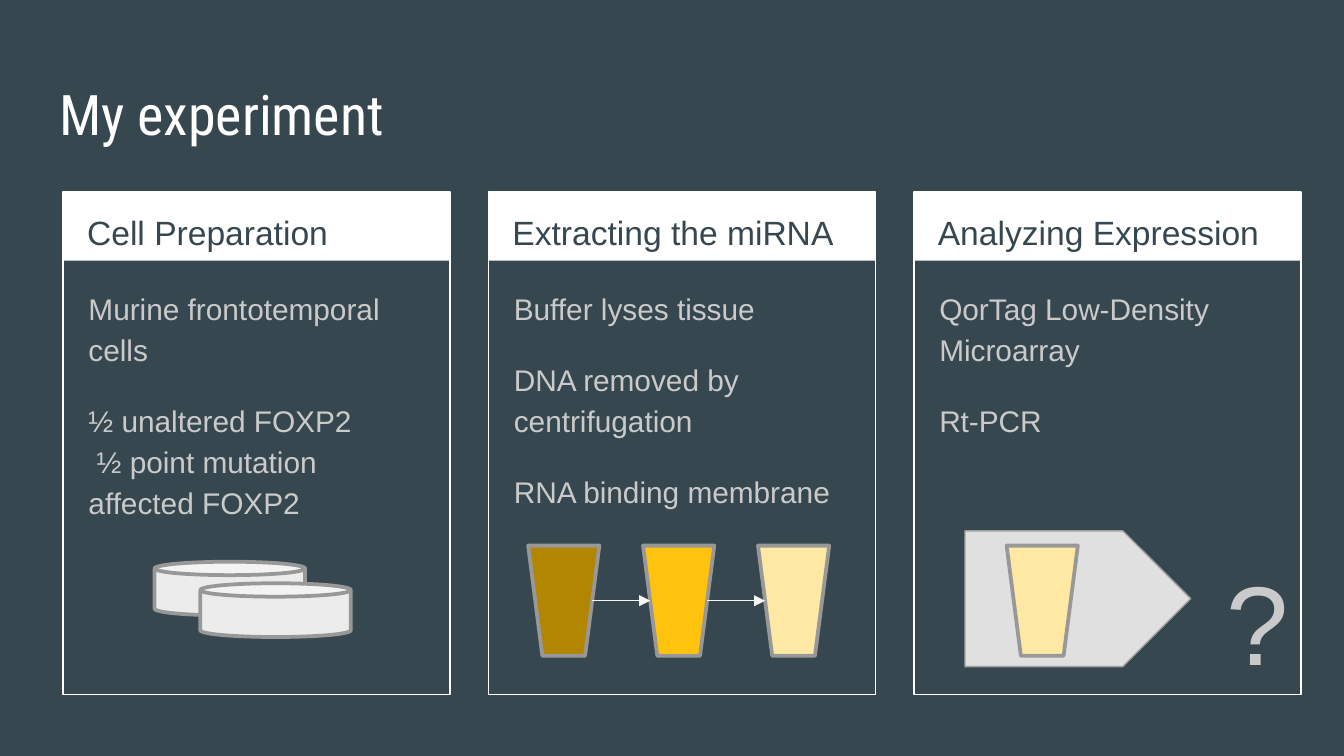
from dataclasses import dataclass

from lxml.etree import SubElement
from pptx import Presentation
from pptx.dml.color import RGBColor
from pptx.enum.shapes import MSO_CONNECTOR, MSO_SHAPE
from pptx.enum.text import MSO_ANCHOR, PP_ALIGN
from pptx.oxml.ns import qn
from pptx.util import Inches, Pt


@dataclass(frozen=True)
class Theme:
    background: str = "37474F"
    white: str = "FFFFFF"
    body: str = "CACACA"
    outline: str = "989898"
    dish: str = "ECECEC"
    arrow: str = "F5F5F5"
    plate: str = "E0E0E0"
    plate_line: str = "9E9E9E"
    title_font: str = "Roboto Condensed"
    font: str = "Arial"
    title_size: int = 30
    heading_size: int = 18
    body_size: int = 16
    mark_size: int = 60
    thin: float = 0.75
    thick: float = 2


THEME = Theme()
TITLE = "My experiment"
CARDS = [
    ("Cell Preparation",
     ["Murine frontotemporal cells",
      "½ unaltered FOXP2\v ½ point mutation affected FOXP2"]),
    ("Extracting the miRNA",
     ["Buffer lyses tissue", "DNA removed by centrifugation", "RNA binding membrane"]),
    ("Analyzing Expression",
     ["QorTag Low-Density Microarray", "Rt-PCR"]),
]
VIAL_COLOURS = ["B28600", "FFC30D", "FFE8A3"]

SLIDE_WIDTH = Inches(10)
SLIDE_HEIGHT = SLIDE_WIDTH * 9 // 16
CARD_LEFT, CARD_TOP, LAST_CARD_LEFT = 0.47, 1.43, 6.8
CARD_PITCH = (LAST_CARD_LEFT - CARD_LEFT) / (len(CARDS) - 1)
CARD_WIDTH, CARD_HEIGHT, HEADER_HEIGHT = 2.88, 3.74, 0.51
HEADING_INSET, BODY_INSET = 0.08, 0.09
VIAL_LEFT, VIAL_TOP, LAST_VIAL_LEFT = 3.93, 4.06, 5.64
VIAL_PITCH = (LAST_VIAL_LEFT - VIAL_LEFT) / (len(VIAL_COLOURS) - 1)
VIAL_WIDTH, VIAL_HEIGHT = 0.53, 0.82
VIAL_SLOPE = 0.1 * VIAL_WIDTH
DISH_LEFT, DISH_TOP = 1.15, 4.18
DISH_STEP_X, DISH_STEP_Y = 0.34, 0.16


def colour(value):
    return RGBColor.from_string(value)


def write(frame, texts, size, text_colour, font=THEME.font, line_spacing=1.15, after=0):
    frame.word_wrap = True
    frame.vertical_anchor = MSO_ANCHOR.TOP
    frame.margin_left = frame.margin_right = Inches(0.1)
    frame.margin_top = frame.margin_bottom = Inches(0.1)
    for index, text in enumerate(texts):
        paragraph = frame.paragraphs[0] if index == 0 else frame.add_paragraph()
        paragraph.text = text
        paragraph.alignment = PP_ALIGN.LEFT
        paragraph.line_spacing = line_spacing
        paragraph.space_before = Pt(0)
        paragraph.space_after = Pt(after)
        paragraph.font.name = font
        paragraph.font.size = Pt(size)
        paragraph.font.color.rgb = colour(text_colour)


def add_text(slide, box, *args, **options):
    text_box = slide.shapes.add_textbox(*map(Inches, box))
    write(text_box.text_frame, *args, **options)


def add_figure(slide, kind, box, fill=None, line=None, line_width=THEME.thick):
    shape = slide.shapes.add_shape(kind, *map(Inches, box))
    shape.shadow.inherit = False
    if fill:
        shape.fill.solid()
        shape.fill.fore_color.rgb = colour(fill)
    else:
        shape.fill.background()
    if line:
        shape.line.color.rgb = colour(line)
        shape.line.width = Pt(line_width)
    else:
        shape.line.fill.background()


def add_card(slide, column, heading, texts):
    left = CARD_LEFT + column * CARD_PITCH
    add_figure(slide, MSO_SHAPE.RECTANGLE,
               (left, CARD_TOP, CARD_WIDTH, HEADER_HEIGHT), THEME.white)
    add_figure(slide, MSO_SHAPE.RECTANGLE, (left, CARD_TOP, CARD_WIDTH, CARD_HEIGHT),
               line=THEME.white, line_width=THEME.thin)
    add_text(slide, (left + HEADING_INSET, CARD_TOP, 2.73, 0.5), [heading],
             THEME.heading_size, THEME.background)
    add_text(slide, (left + BODY_INSET, 2.02, 2.71, 3.06), texts,
             THEME.body_size, THEME.body, after=16)


def add_vial(slide, left, fill):
    add_figure(slide, MSO_SHAPE.FLOWCHART_MANUAL_OPERATION,
               (left, VIAL_TOP, VIAL_WIDTH, VIAL_HEIGHT), fill, THEME.outline)


def add_arrow(slide, start, end, height):
    connector = slide.shapes.add_connector(
        MSO_CONNECTOR.STRAIGHT, *map(Inches, (start, height, end, height)))
    connector.line.color.rgb = colour(THEME.arrow)
    connector.line.width = Pt(THEME.thin)
    SubElement(connector.line._get_or_add_ln(), qn("a:tailEnd"), type="triangle")
    SubElement(connector._element.spPr, qn("a:effectLst"))


def main():
    presentation = Presentation()
    presentation.slide_width, presentation.slide_height = SLIDE_WIDTH, SLIDE_HEIGHT
    slide = presentation.slides.add_slide(presentation.slide_layouts[5])
    slide.background.fill.solid()
    slide.background.fill.fore_color.rgb = colour(THEME.background)

    title = slide.shapes.title
    title.left, title.top, title.width, title.height = map(Inches, (0.34, 0.49, 9.32, 0.63))
    write(title.text_frame, [TITLE], THEME.title_size, THEME.white,
          font=THEME.title_font, line_spacing=1)

    for column, (heading, texts) in enumerate(CARDS):
        add_card(slide, column, heading, texts)

    add_figure(slide, MSO_SHAPE.PENTAGON, (7.18, 3.95, 1.68, 1.01),
               THEME.plate, THEME.plate_line, THEME.thin)
    add_text(slide, (9.03, 3.87, 0.64, 1.01), ["?"], THEME.mark_size, THEME.body, after=16)

    for step in range(2):
        add_figure(slide, MSO_SHAPE.CAN,
                   (DISH_LEFT + step * DISH_STEP_X, DISH_TOP + step * DISH_STEP_Y, 1.12, 0.4),
                   THEME.dish, THEME.outline)

    vial_lefts = [VIAL_LEFT + step * VIAL_PITCH for step in range(len(VIAL_COLOURS))]
    for left, fill in zip(vial_lefts, VIAL_COLOURS):
        add_vial(slide, left, fill)
    for left, following in zip(vial_lefts, vial_lefts[1:]):
        add_arrow(slide, left + VIAL_WIDTH - VIAL_SLOPE, following + VIAL_SLOPE,
                  VIAL_TOP + VIAL_HEIGHT / 2)
    add_vial(slide, 7.49, VIAL_COLOURS[-1])

    presentation.save("out.pptx")


if __name__ == "__main__":
    main()
